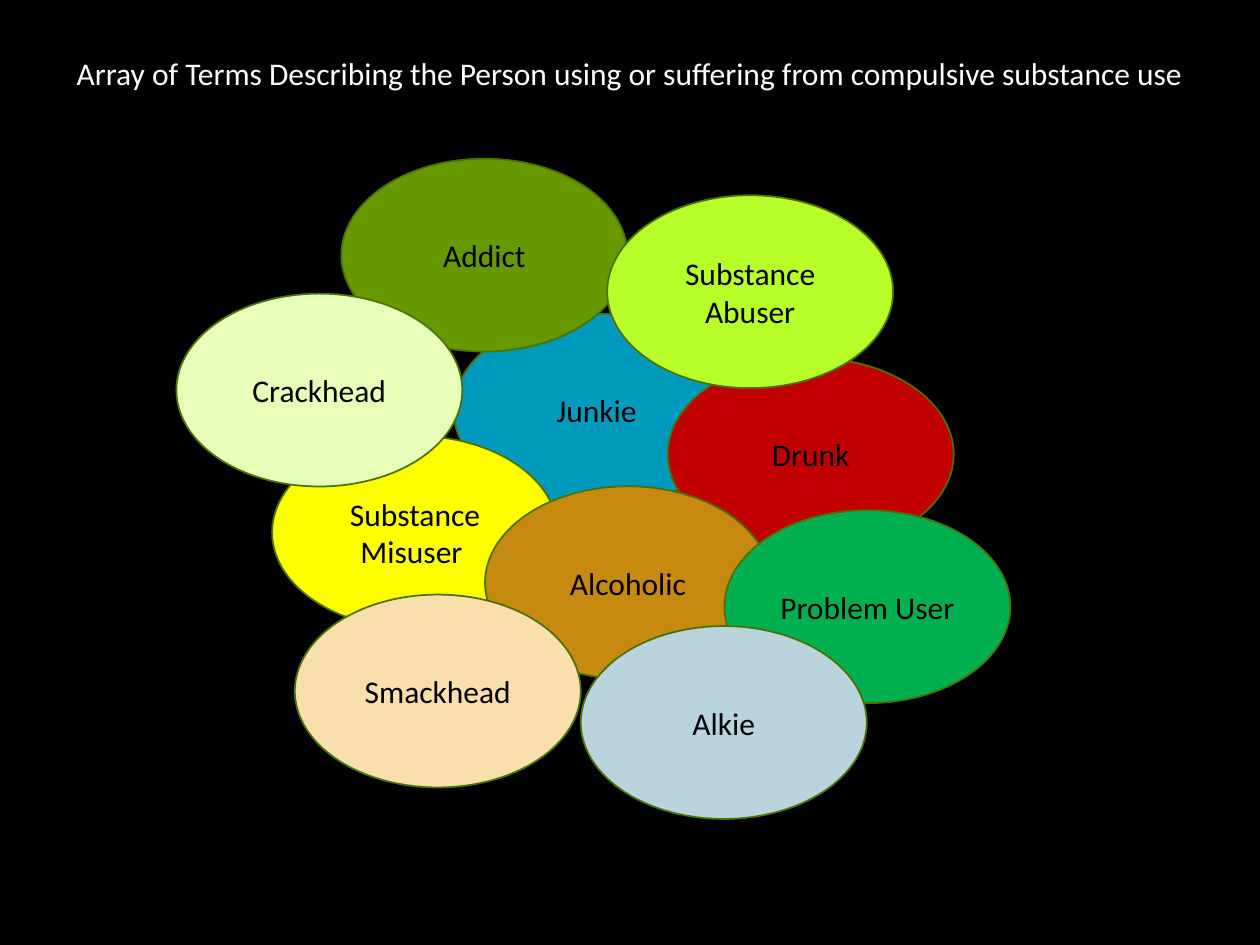
from pptx import Presentation
from pptx.dml.color import RGBColor
from pptx.enum.shapes import MSO_SHAPE as Shape
from pptx.enum.text import MSO_ANCHOR as Anchor, MSO_AUTO_SIZE as AutoSize, PP_ALIGN as Align
from pptx.util import Pt

COLORS = {
    "background": "000000",
    "title": "FFFFFF",
    "label": "000000",
    "outline": "4B7100",
    "blue": "009BBC",
    "olive": "669900",
    "red": "C00000",
    "lime": "B8FF29",
    "yellow": "FFFF00",
    "ochre": "C68A10",
    "green": "00B050",
    "pale blue": "BAD4DD",
    "peach": "F8DFAC",
    "pale lime": "E7FFB8",
}
OVAL_WIDTH, OVAL_HEIGHT = 163.4, 110.2

# Term, left, top and fill, from back to front
TERMS = [
    ("Junkie", 259.2, 179.3, "blue"),
    ("Addict", 195.1, 90.7, "olive"),
    ("Drunk", 381.6, 204.5, "red"),
    ("Substance Abuser", 347, 111.6, "lime"),
    ("Substance Misuser ", 155.5, 249.1, "yellow"),
    ("Alcoholic", 277.2, 277.9, "ochre"),
    ("Problem User", 414, 291.6, "green"),
    ("Alkie", 331.9, 357.8, "pale blue"),
    ("Smackhead", 168.5, 339.8, "peach"),
    ("Crackhead", 100.8, 167.8, "pale lime"),
]


def color(name):
    return RGBColor.from_string(COLORS[name])


def write_text(shape, text, *, fill, align=Align.LEFT, anchor=Anchor.TOP,
               wrap=True, size=18, font="Calibri"):
    frame = shape.text_frame
    frame.word_wrap = wrap
    frame.vertical_anchor = anchor
    paragraph = frame.paragraphs[0]
    paragraph.alignment = align
    run = paragraph.add_run()
    run.text = text
    run.font.name = font
    run.font.size = Pt(size)
    run.font.color.rgb = color(fill)


def add_title(slide, text):
    box = slide.shapes.add_textbox(Pt(36.7), Pt(27.4), Pt(654.5), Pt(28.8))
    write_text(box, text, fill="title", wrap=False)
    box.text_frame.auto_size = AutoSize.SHAPE_TO_FIT_TEXT


def add_term(slide, text, left, top, fill):
    oval = slide.shapes.add_shape(
        Shape.OVAL, Pt(left), Pt(top), Pt(OVAL_WIDTH), Pt(OVAL_HEIGHT))
    oval.shadow.inherit = False
    oval.fill.solid()
    oval.fill.fore_color.rgb = color(fill)
    oval.line.color.rgb = color("outline")
    oval.line.width = Pt(1)
    write_text(oval, text, fill="label", align=Align.CENTER, anchor=Anchor.MIDDLE)


def main():
    presentation = Presentation()
    presentation.slide_width, presentation.slide_height = Pt(720), Pt(540)
    slide = presentation.slides.add_slide(presentation.slide_layouts[6])

    # Background
    slide.background.fill.solid()
    slide.background.fill.fore_color.rgb = color("background")

    # Title and overlapping terms
    add_title(slide, "Array of Terms Describing the Person using or suffering "
                     "from compulsive substance use")
    for term in TERMS:
        add_term(slide, *term)

    presentation.save("out.pptx")


if __name__ == "__main__":
    main()
